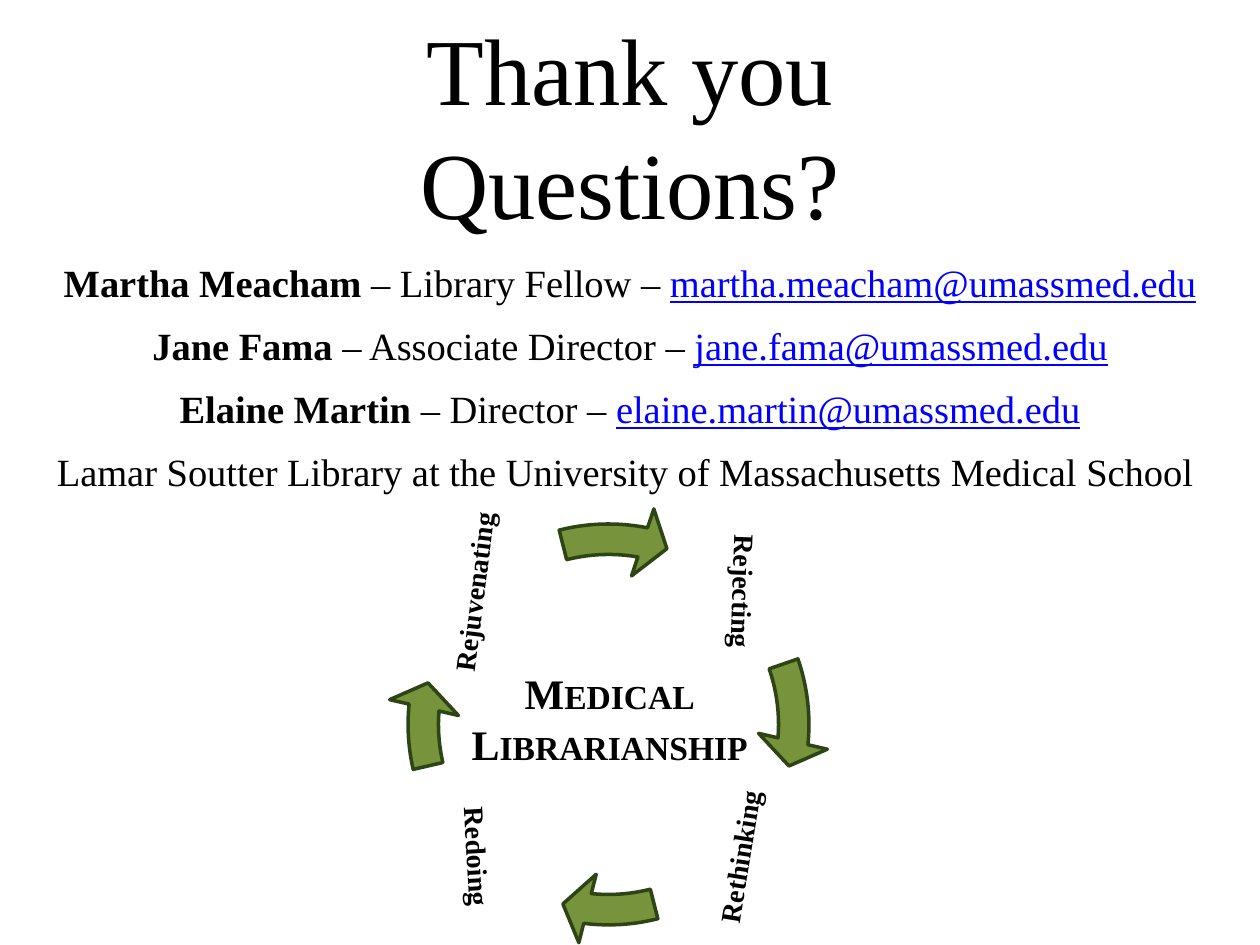
from pptx import Presentation
from pptx import util as u
from pptx.dml.color import RGBColor
from pptx.enum import shapes, text


def color(value):
    return RGBColor.from_string(value)


class ThanksSlide:
    FONT = "Times New Roman"
    INK = "000000"
    LINK = "0000FF"
    FILL = "77933C"
    EDGE = "2D4414"

    def __init__(self, prs):
        self.s = prs.slides.add_slide(prs.slide_layouts[5])

    def style(self, p, size, bold=None):
        p.alignment = text.PP_ALIGN.CENTER
        p.font.name = self.FONT
        p.font.size = u.Pt(size)
        p.font.bold = bold
        p.font.color.rgb = color(self.INK)

    def title(self, words, left, top, width, height):
        sp = self.s.shapes.title
        sp.left, sp.top = u.Inches(left), u.Inches(top)
        sp.width, sp.height = u.Inches(width), u.Inches(height)
        tf = sp.text_frame
        tf.auto_size = text.MSO_AUTO_SIZE.NONE
        tf.vertical_anchor = text.MSO_ANCHOR.MIDDLE
        tf.margin_bottom = u.Inches(0.65)
        tf.text = words
        self.style(tf.paragraphs[0], 54)

    def box(self, left, top, width, height):
        sp = self.s.shapes.add_textbox(
            u.Inches(left), u.Inches(top), u.Inches(width), u.Inches(height))
        sp.text_frame.word_wrap = True
        return sp

    def contacts(self, people, library, left, top, width, height):
        tf = self.box(left, top, width, height).text_frame
        p = tf.paragraphs[0]
        for name, role, mail in people:
            self.style(p, 22)
            p.add_run().text = f"{name} "
            p.runs[0].font.bold = True
            p.add_run().text = f"– {role} – "
            r = p.add_run()
            r.text = mail
            r.font.underline = True
            r.font.color.rgb = color(self.LINK)
            p = tf.add_paragraph()
            p.space_before = u.Pt(9.6)
        p.text = library
        self.style(p, 22)

    def label(self, word, left, top, width, height, angle):
        sp = self.box(left, top, width, height)
        sp.rotation = angle
        tf = sp.text_frame
        tf.vertical_anchor = text.MSO_ANCHOR.MIDDLE
        tf.margin_left = tf.margin_right = u.Inches(0.02)
        tf.margin_top = tf.margin_bottom = u.Inches(0.02)
        p = tf.paragraphs[0]
        p.text = word
        p.line_spacing = 0.9
        self.style(p, 16, True)

    def arrow(self, end, start):
        sp = self.s.shapes.add_shape(
            shapes.MSO_SHAPE.CIRCULAR_ARROW,
            u.Inches(3.08), u.Inches(4), u.Inches(3.5), u.Inches(3.5))
        for i, value in enumerate((0.069, 4.649, end, start, 0.08)):
            sp.adjustments[i] = value
        sp.shadow.inherit = False
        sp.fill.solid()
        sp.fill.fore_color.rgb = color(self.FILL)
        sp.line.color.rgb = color(self.EDGE)
        sp.line.width = u.Pt(2)

    def center(self, words, left, top, width, height):
        p = self.box(left, top, width, height).text_frame.paragraphs[0]
        p.text = words
        self.style(p, 24, True)
        p.runs[0].font._element.set("cap", "small")


def main():
    prs = Presentation()
    prs.slide_width, prs.slide_height = u.Inches(10), u.Inches(7.5)
    slide = ThanksSlide(prs)
    slide.title("Thank you\vQuestions?", 0, 0.33, 10, 1.92)
    people = [
        ("Martha Meacham", "Library Fellow", "martha.meacham@umassmed.edu"),
        ("Jane Fama", "Associate Director", "jane.fama@umassmed.edu"),
        ("Elaine Martin", "Director", "elaine.martin@umassmed.edu"),
    ]
    slide.contacts(
        people,
        "Lamar Soutter Library at the University of Massachusetts Medical School ",
        0, 2.01, 10, 2.29)
    cycle = [
        (("Rejecting", 5.3, 4.13, 1.17, 1.13, 91.9), (3.132, 204.543)),
        (("Rethinking", 5.2, 6.08, 1.37, 1.44, 279.2), (57.902, 45.449)),
        (("Redoing", 3.09, 6.08, 1.37, 1.44, 86.7), (111.132, 100.219)),
        (("Rejuvenating", 3.09, 3.98, 1.37, 1.44, 277.2), (168.38, 153.449)),
    ]
    for label, sweep in cycle:
        slide.label(*label)
        slide.arrow(*sweep)
    slide.center("Medical Librarianship", 3.38, 5.25, 2.92, 0.91)
    prs.save("out.pptx")


if __name__ == "__main__":
    main()
